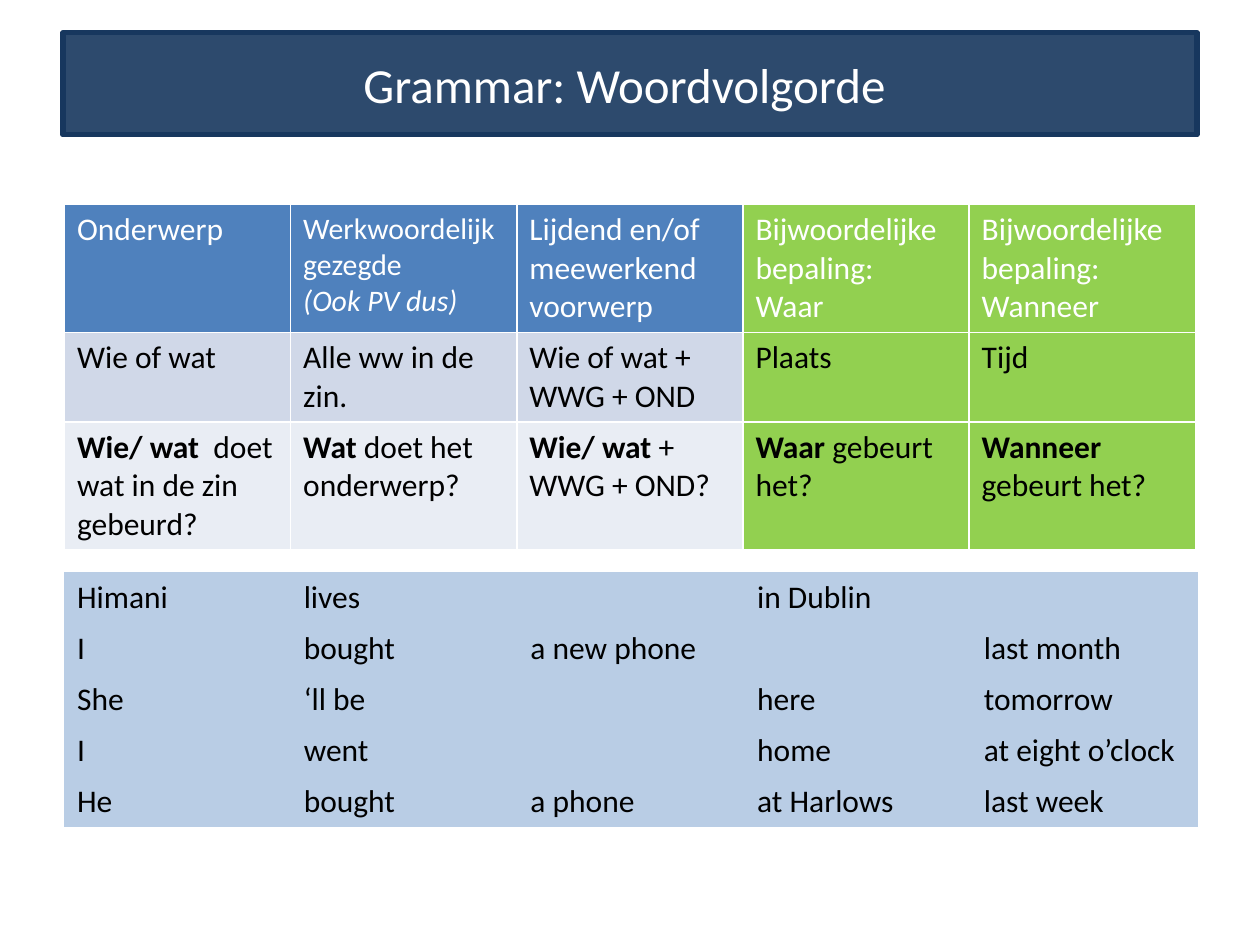
from dataclasses import dataclass

from lxml.etree import SubElement
from pptx import Presentation
from pptx.dml.color import RGBColor as Color
from pptx.enum.shapes import MSO_SHAPE as Shape
from pptx.enum.text import MSO_ANCHOR as Anchor, PP_ALIGN as Align
from pptx.oxml.ns import qn
from pptx.util import Cm, Pt


@dataclass(frozen=True)
class Theme:
    font: str = "Calibri"
    navy: str = "17375E"
    blue: str = "4F81BD"
    green: str = "92D050"
    mid_band: str = "D0D8E8"
    light_band: str = "E9EDF4"
    example: str = "B9CDE5"
    white: str = "FFFFFF"
    black: str = "000000"
    title_size: int = 28
    body_size: int = 18
    narrow_size: int = 17


theme = Theme()
NO_STYLE = "{2D5ABB26-0587-4C30-8999-92F81FD0307C}"


def set_font(paragraph, size, color):
    paragraph.font.name = theme.font
    paragraph.font.size = Pt(size)
    paragraph.font.color.rgb = Color.from_string(color)


def add_plain_table(top, column_width, row_heights):
    """Add a five-column table without any built-in style."""
    frame = slide.shapes.add_table(len(row_heights), 5, Cm(1.3), Cm(top),
                                   Cm(5 * column_width), Cm(sum(row_heights)))
    table = frame.table
    table.first_row = table.horz_banding = False
    table._tbl.tblPr.find(qn("a:tableStyleId")).text = NO_STYLE
    for column in table.columns:
        column.width = Cm(column_width)
    for row, height in zip(table.rows, row_heights):
        row.height = Cm(height)
    return table


presentation = Presentation()
presentation.slide_width, presentation.slide_height = Cm(25.4), Cm(19.05)
slide = presentation.slides.add_slide(presentation.slide_layouts[6])

# Title bar
title = slide.shapes.add_shape(Shape.RECTANGLE, Cm(1.27), Cm(0.66), Cm(22.86), Cm(2.06))
title.shadow.inherit = False
title.fill.solid()
title.fill.fore_color.rgb = Color.from_string(theme.navy)
fill_color = title._element.spPr.find(qn("a:solidFill"))[0]
SubElement(fill_color, qn("a:alpha"), val="90000")
title.line.color.rgb = Color.from_string(theme.navy)
title.line.width = Pt(3)
title.text_frame.word_wrap = True
title.text_frame.vertical_anchor = Anchor.MIDDLE
title_paragraph = title.text_frame.paragraphs[0]
title_paragraph.text = "Grammar: Woordvolgorde "
title_paragraph.alignment = Align.CENTER
set_font(title_paragraph, theme.title_size, theme.white)

# Sentence parts: each cell is a (bold, regular) pair
sentence_parts = [
    [("", "Onderwerp"), ("", "Werkwoordelijk gezegde\n(Ook PV dus)"),
     ("", "Lijdend en/of meewerkend voorwerp"),
     ("", "Bijwoordelijke bepaling:\nWaar"), ("", "Bijwoordelijke bepaling:\nWanneer")],
    [("", "Wie of wat"), ("", "Alle ww in de zin."), ("", "Wie of wat + WWG + OND"),
     ("", "Plaats"), ("", "Tijd")],
    [("Wie/ wat  ", "doet wat in de zin gebeurd?"), ("Wat ", "doet het onderwerp?"),
     ("Wie/ wat ", "+ WWG + OND?"), ("Waar ", "gebeurt het?"),
     ("Wanneer ", "gebeurt het?")],
]
row_fills = [theme.blue, theme.mid_band, theme.light_band]
parts_table = add_plain_table(4.12, 4.56, [2.58, 1.8, 2.58])
for row_index, row in enumerate(sentence_parts):
    for column_index, (bold, regular) in enumerate(row):
        cell = parts_table.cell(row_index, column_index)
        properties = cell._tc.get_or_add_tcPr()
        for side in ("lnL", "lnR", "lnT", "lnB"):
            border = SubElement(properties, qn(f"a:{side}"), w=str(Pt(1)))
            border_fill = SubElement(border, qn("a:solidFill"))
            SubElement(border_fill, qn("a:srgbClr"), val=theme.white)
        cell.fill.solid()
        fill = theme.green if column_index >= 3 else row_fills[row_index]
        cell.fill.fore_color.rgb = Color.from_string(fill)
        if bold:
            paragraph = cell.text_frame.paragraphs[0]
            for text in (bold, regular):
                run = paragraph.add_run()
                run.text = text
                run.font.bold = text == bold
        else:
            cell.text = regular
        for paragraph in cell.text_frame.paragraphs:
            set_font(paragraph, theme.body_size, theme.black if row_index else theme.white)

verb_paragraphs = parts_table.cell(0, 1).text_frame.paragraphs
for paragraph in verb_paragraphs:
    paragraph.font.size = Pt(theme.narrow_size)
verb_paragraphs[1].font.italic = True

# Example sentences
examples = [
    ["Himani", "lives", "", "in Dublin", ""],
    ["I", "bought", "a new phone", "", "last month"],
    ["She", "‘ll be", "", "here", "tomorrow"],
    ["I", "went", "", "home", "at eight o’clock"],
    ["He", "bought", "a phone", "at Harlows", "last week"],
]
example_table = add_plain_table(11.53, 4.57, [1.03] * len(examples))
for row_index, row in enumerate(examples):
    for column_index, text in enumerate(row):
        cell = example_table.cell(row_index, column_index)
        cell.fill.solid()
        cell.fill.fore_color.rgb = Color.from_string(theme.example)
        cell.text = text
        set_font(cell.text_frame.paragraphs[0], theme.body_size, theme.black)

presentation.save("out.pptx")
